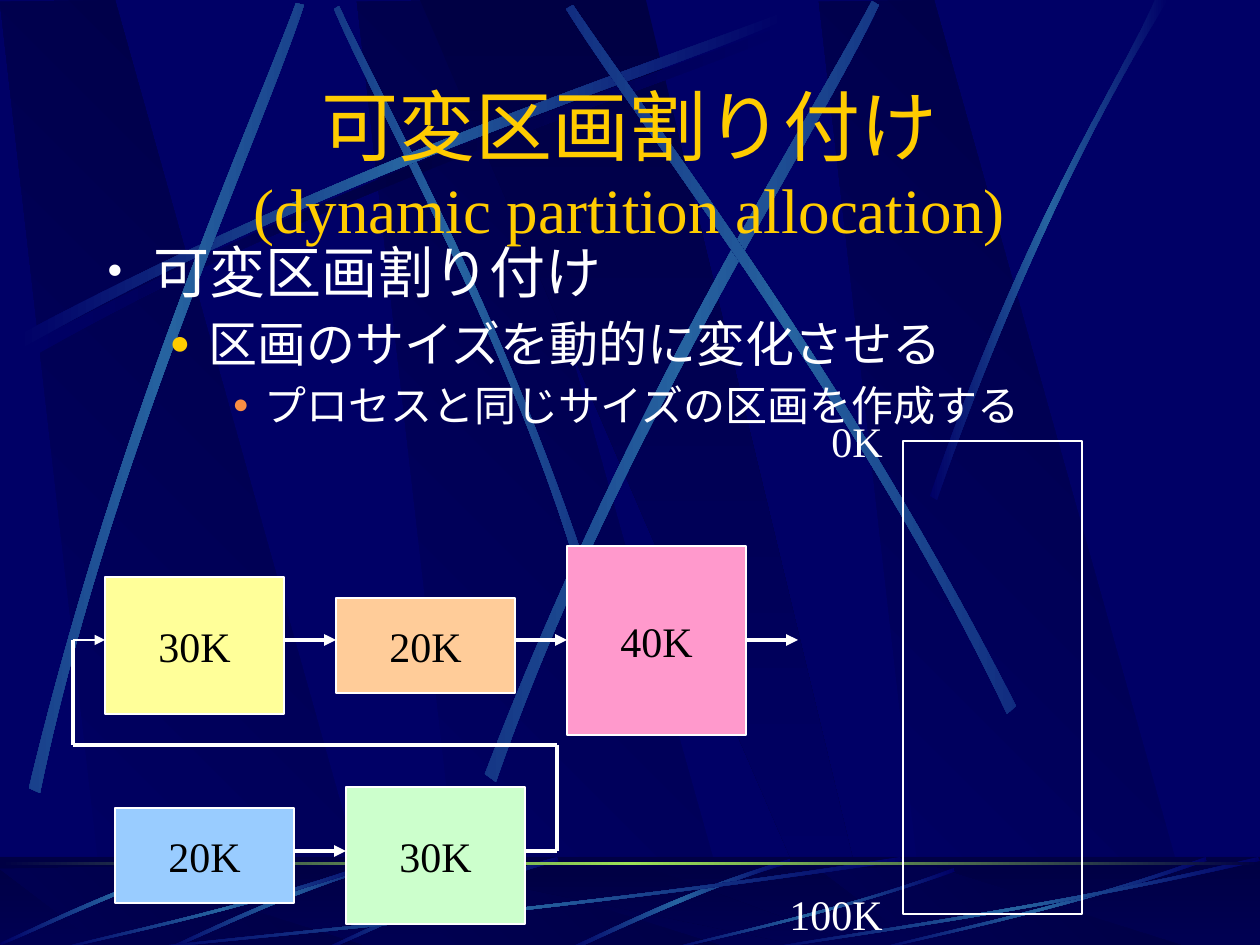
from math import cos, radians, sin

from lxml.etree import SubElement as Sub
from pptx import Presentation
from pptx.dml.color import RGBColor
from pptx.enum.shapes import MSO_CONNECTOR as Conn, MSO_SHAPE as Shape
from pptx.enum.text import MSO_ANCHOR as Anchor, MSO_AUTO_SIZE as Auto, PP_ALIGN as Align
from pptx.oxml.ns import qn
from pptx.util import Pt

SCALE = 914400 / 126
FONT = "Times New Roman"
WHITE, BLACK, GOLD = "FFFFFF", "000000", "FFCC00"
NAVY, DARK, BLUE = "000066", "000044", "2663A0"


def emu(*px):
    return [round(v * SCALE) for v in px]


def color(value):
    return RGBColor.from_string(value)


def put(p, text, size=24, c=WHITE, font=FONT):
    r = p.add_run()
    r.text = text
    r.font.size = Pt(size)
    r.font.name = font
    r.font.color.rgb = color(c)
    return r


def turn(x, y, degrees):
    a = radians(degrees)
    return x * cos(a) - y * sin(a), x * sin(a) + y * cos(a)


def shift(points, dx, dy=0):
    return [(x + dx, y + dy) for x, y in points]


class Deck:
    def __init__(self):
        self.prs = Presentation()
        self.prs.slide_width, self.prs.slide_height = emu(1260, 945)
        self.s = self.prs.slides.add_slide(self.prs.slide_layouts[1])
        self.s.background.fill.solid()
        self.s.background.fill.fore_color.rgb = color(NAVY)

    def gradient(self, sp, colors, angle=0):
        sp.shadow.inherit = False
        sp.line.fill.background()
        sp.fill.gradient()
        sp.fill.gradient_angle = -angle % 360
        grad = sp._element.spPr.find(qn("a:gradFill"))
        grad.set("rotWithShape", "0")
        stops = grad.find(qn("a:gsLst"))
        for old in list(stops):
            stops.remove(old)
        for i, c in enumerate(colors):
            gs = Sub(stops, qn("a:gs"), pos=str(round(100000 * i / (len(colors) - 1))))
            Sub(gs, qn("a:srgbClr"), val=c)

    def outline(self, points, colors, angle=0):
        points = [emu(*pt) for pt in points]
        fb = self.s.shapes.build_freeform(*points[0], scale=1.0)
        fb.add_line_segments(points[1:], close=True)
        sp = fb.convert_to_shape()
        self.gradient(sp, colors, angle)
        return sp

    def streak(self, points, mid=BLUE, rot=0):
        sp = self.outline([turn(x, y, -rot) for x, y in points], (NAVY, mid, NAVY))
        cx, cy = turn(sp.left + sp.width / 2, sp.top + sp.height / 2, rot)
        sp.left, sp.top = round(cx - sp.width / 2), round(cy - sp.height / 2)
        sp.rotation = rot
        segments = sp._element.spPr.findall(".//" + qn("a:lnTo"))
        for first in (0, 4):
            head, *rest = segments[first:first + 3]
            head.tag = qn("a:cubicBezTo")
            for seg in rest:
                head.append(seg[0])
                seg.getparent().remove(seg)

    def band(self, y, h, colors, angle=0):
        sp = self.s.shapes.add_shape(Shape.RECTANGLE, *emu(0, y, 1260, h))
        self.gradient(sp, colors, angle)

    def veil(self, y, h, c, alpha):
        sp = self.box(0, y, 1260, h, fill=c)
        sp.line.fill.background()
        clr = sp._element.spPr.find(qn("a:solidFill"))[0]
        Sub(clr, qn("a:alpha"), val=str(alpha * 1000))

    def box(self, x, y, w, h, text="", fill=None):
        sp = self.s.shapes.add_shape(Shape.RECTANGLE, *emu(x, y, w, h))
        sp.shadow.inherit = False
        if fill:
            sp.fill.solid()
            sp.fill.fore_color.rgb = color(fill)
        else:
            sp.fill.background()
        sp.line.color.rgb = color(WHITE)
        sp.line.width = Pt(1.5)
        if text:
            tf = sp.text_frame
            tf.word_wrap = False
            tf.vertical_anchor = Anchor.MIDDLE
            tf.paragraphs[0].alignment = Align.CENTER
            put(tf.paragraphs[0], text, c=BLACK)
        return sp

    def line(self, x1, y1, x2, y2, width=2.25, arrow=False):
        cn = self.s.shapes.add_connector(Conn.STRAIGHT, *emu(x1, y1, x2, y2))
        cn.line.color.rgb = color(WHITE)
        cn.line.width = Pt(width)
        if arrow:
            Sub(cn.line._get_or_add_ln(), qn("a:tailEnd"), type="triangle")
        Sub(cn._element.spPr, qn("a:effectLst"))

    def label(self, x, y, w, h, text):
        tf = self.s.shapes.add_textbox(*emu(x, y, w, h)).text_frame
        tf.word_wrap = False
        tf.auto_size = Auto.SHAPE_TO_FIT_TEXT
        put(tf.paragraphs[0], text)

    def place(self, sp, x, y, w, h, anchor):
        sp._element.getparent().append(sp._element)
        sp.left, sp.top, sp.width, sp.height = emu(x, y, w, h)
        tf = sp.text_frame
        tf.auto_size = Auto.NONE
        tf.vertical_anchor = anchor
        return tf

    def title(self, first, second):
        p = self.place(self.s.shapes.title, 94, 72, 1071, 181, Anchor.MIDDLE).paragraphs[0]
        p.alignment = Align.CENTER
        put(p, first, size=44, c=GOLD)
        p.add_line_break()
        put(p, second, size=36, c=GOLD)

    def body(self, items):
        tf = self.place(self.s.placeholders[1], 94, 231, 1071, 231, Anchor.TOP)
        for i, (text, size, margin, hang, char, c, pct) in enumerate(items):
            p = tf.add_paragraph() if i else tf.paragraphs[0]
            p.level = i
            pPr = p._p.get_or_add_pPr()
            pPr.set("marL", str(emu(margin)[0]))
            pPr.set("indent", str(emu(-hang)[0]))
            Sub(Sub(pPr, qn("a:buClr")), qn("a:srgbClr"), val=c)
            Sub(pPr, qn("a:buSzPct"), val=str(pct * 1000))
            Sub(pPr, qn("a:buFont"), typeface=FONT)
            Sub(pPr, qn("a:buChar"), char=char)
            p.alignment = Align.LEFT
            p.space_before = Pt(int(size * 0.2) if i else 0)
            put(p, text, size=size)


def wedges(d, top, bottom):
    for dx in (357, 0, 819):
        d.outline(shift([(108, bottom), (381, bottom), (115, top), (0, top + 2)], dx),
                  (NAVY, DARK), 315)
    d.outline([(420, top), (829, bottom), (874, bottom), (646, top)], (DARK, NAVY), 90)


def backdrop(d):
    wedges(d, 0, 947)
    beam = [(25, 346), (358, 169), (660, 74), (789, 23),
            (793, 30), (665, 87), (320, 190), (29, 359)]
    d.streak(beam, mid=DARK)
    for rot, points in (
        (45, [(580, 549), (493, 295), (381, 97), (339, 6),
              (334, 9), (372, 100), (501, 325), (572, 553)]),
        (0, shift(beam, -8, -10)),
        (311.7, [(29, 788), (117, 421), (248, 132), (296, 3),
                 (304, 5), (261, 137), (108, 464), (40, 793)]),
        (321.6, [(485, 774), (627, 403), (804, 129), (872, 1),
                 (879, 5), (818, 136), (612, 447), (496, 782)]),
        (34.7, [(1016, 706), (844, 369), (650, 120), (573, 5),
                (566, 9), (639, 127), (863, 410), (1007, 714)]),
        (0, [(930, 496), (1026, 218), (1119, 83), (1155, 0),
             (1168, 0), (1053, 183), (969, 406), (937, 500)]),
    ):
        d.streak(points, rot=rot)


def floor(d):
    d.band(857, 94, (DARK, NAVY), 90)
    wedges(d, 867, 951)
    d.veil(857, 94, DARK, 50)
    d.streak([(790, 859), (677, 893), (601, 935), (564, 950),
              (571, 951), (617, 930), (719, 882), (791, 863)])
    ray = [(557, 857), (447, 888), (362, 932), (323, 949),
           (324, 951), (363, 936), (460, 886), (559, 861)]
    for dx, dy in ((0, 0), (-158, 0), (-323, -6)):
        d.streak(shift(ray, dx, dy), rot=315)
    sweep = [(777, 4), (440, 54), (134, 80), (4, 94), (0, 93), (129, 77), (479, 48), (774, 0)]
    for x, y, w in ((126, 857, 777), (53, 857, 335), (664, 868, 291), (872, 857, 335), (756, 857, 504)):
        d.streak([(x + px * w / 777, y + py * (951 - y) / 94) for px, py in sweep])
    d.band(862, 3, (DARK, "9CE157", DARK))


def processes(d):
    for x, y, h, text, fill, arrow_y in (
        (567, 546, 189, "40K", "FF99CC", 640),
        (336, 598, 95, "20K", "FFCC99", 640),
        (105, 577, 137, "30K", "FFFF99", 640),
        (115, 808, 95, "20K", "99CCFF", 851),
        (346, 787, 137, "30K", "CCFFCC", None),
    ):
        d.box(x, y, 179, h, text, fill)
        if arrow_y:
            d.line(x + 179, arrow_y, x + 231, arrow_y, arrow=True)
    d.line(73, 640, 105, 640, width=1.5, arrow=True)
    route = [(73, 640), (73, 745), (557, 745), (557, 851), (525, 851)]
    for start, end in zip(route, route[1:]):
        d.line(*start, *end)


def main():
    d = Deck()
    backdrop(d)
    floor(d)
    d.title("可変区画割り付け", "(dynamic partition allocation)")
    d.body([
        ("可変区画割り付け", 32, 47, 47, "•", WHITE, 85),
        ("区画のサイズを動的に変化させる", 28, 102, 39, "●", GOLD, 70),
        ("プロセスと同じサイズの区画を作成する", 24, 158, 32, "●", "F98D43", 65),
    ])
    d.label(819, 409, 77, 63, "0K")
    d.label(777, 882, 119, 63, "100K")
    processes(d)
    d.box(903, 441, 179, 473)
    d.prs.save("out.pptx")


if __name__ == "__main__":
    main()
